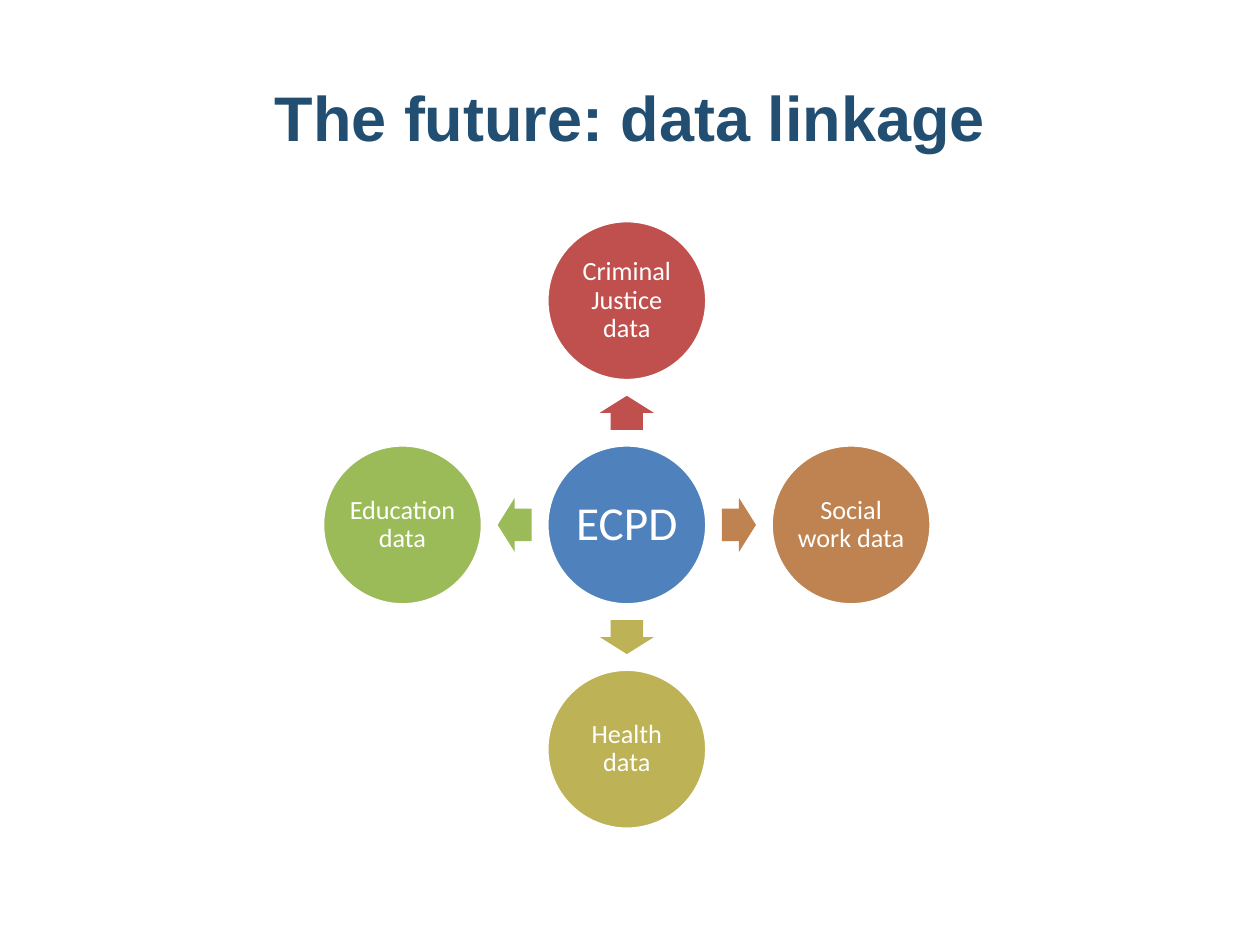
from dataclasses import dataclass

from pptx import Presentation
from pptx.dml.color import RGBColor
from pptx.enum.shapes import MSO_SHAPE
from pptx.enum.text import MSO_ANCHOR, PP_ALIGN
from pptx.util import Inches, Pt

CIRCLE, ARROW = MSO_SHAPE.OVAL, MSO_SHAPE.RIGHT_ARROW
MIDDLE, CENTER = MSO_ANCHOR.MIDDLE, PP_ALIGN.CENTER

COLORS = {"title": "224E71", "white": "FFFFFF", "blue": "4F81BD", "red": "C0504D",
          "brown": "BE8351", "olive": "BDB255", "green": "9BBB59"}

WIDTH, HEIGHT = 10, 7.5
HUB_X, HUB_Y = 0.4975 * WIDTH, 0.5555 * HEIGHT
STEP = 1.78  # hub centre to spoke centre
DIAMETER = 1.27
ARROW_W, ARROW_H = 0.27, 0.43


@dataclass
class Spoke:
    label: str
    color: str
    col: int
    row: int
    angle: int


SPOKES = [
    Spoke("Criminal Justice data", "red", 0, -1, 270),
    Spoke("Social work data", "brown", 1, 0, 0),
    Spoke("Health data", "olive", 0, 1, 90),
    Spoke("Education data", "green", -1, 0, 180),
]


def rgb(name: str) -> RGBColor:
    return RGBColor.from_string(COLORS[name])


def write(tf, text: str, size: float, font: str, color: str, inset: float,
          bold: bool = False, spacing: float = 1.0) -> None:
    tf.word_wrap = True
    tf.vertical_anchor = MIDDLE
    tf.margin_left = tf.margin_right = tf.margin_top = tf.margin_bottom = Inches(inset)
    p = tf.paragraphs[0]
    p.alignment = CENTER
    p.line_spacing = spacing
    r = p.add_run()
    r.text = text
    r.font.size, r.font.name, r.font.bold = Pt(size), font, bold
    r.font.color.rgb = rgb(color)


def add_centered(s, kind, col: float, row: float, w: float, h: float, color: str):
    """Place a shape by its centre, in steps from the hub."""
    x, y = HUB_X + col * STEP, HUB_Y + row * STEP
    sp = s.shapes.add_shape(kind, Inches(x - w / 2), Inches(y - h / 2), Inches(w), Inches(h))
    sp.shadow.inherit = False
    sp.fill.solid()
    sp.fill.fore_color.rgb = rgb(color)
    return sp


def add_circle(s, label: str, color: str, col: int, row: int, size: float, inset: float) -> None:
    sp = add_centered(s, CIRCLE, col, row, DIAMETER, DIAMETER, color)
    sp.line.color.rgb = rgb("white")
    sp.line.width = Pt(2)
    write(sp.text_frame, label, size, "Calibri", "white", inset, spacing=0.9)


def add_arrow(s, spoke: Spoke) -> None:
    sp = add_centered(s, ARROW, spoke.col / 2, spoke.row / 2, ARROW_W, ARROW_H, spoke.color)
    sp.adjustments[0], sp.adjustments[1] = 0.6, 0.5
    sp.rotation = spoke.angle
    sp.line.fill.background()


def main() -> None:
    prs = Presentation()
    prs.slide_width, prs.slide_height = Inches(WIDTH), Inches(HEIGHT)
    s = prs.slides.add_slide(prs.slide_layouts[6])

    # Title
    tb = s.shapes.add_textbox(Inches(0.05 * WIDTH), Inches(0.04 * HEIGHT),
                              Inches(0.9 * WIDTH), Inches(1.25))
    write(tb.text_frame, "The future: data linkage", 36, "Arial", "title", 0.05, bold=True)

    # Hub, then each arrow and its data source
    add_circle(s, "ECPD", "blue", 0, 0, 27, 0.04)
    for spoke in SPOKES:
        add_arrow(s, spoke)
        add_circle(s, spoke.label, spoke.color, spoke.col, spoke.row, 15, 0.02)

    prs.save("out.pptx")


if __name__ == "__main__":
    main()
